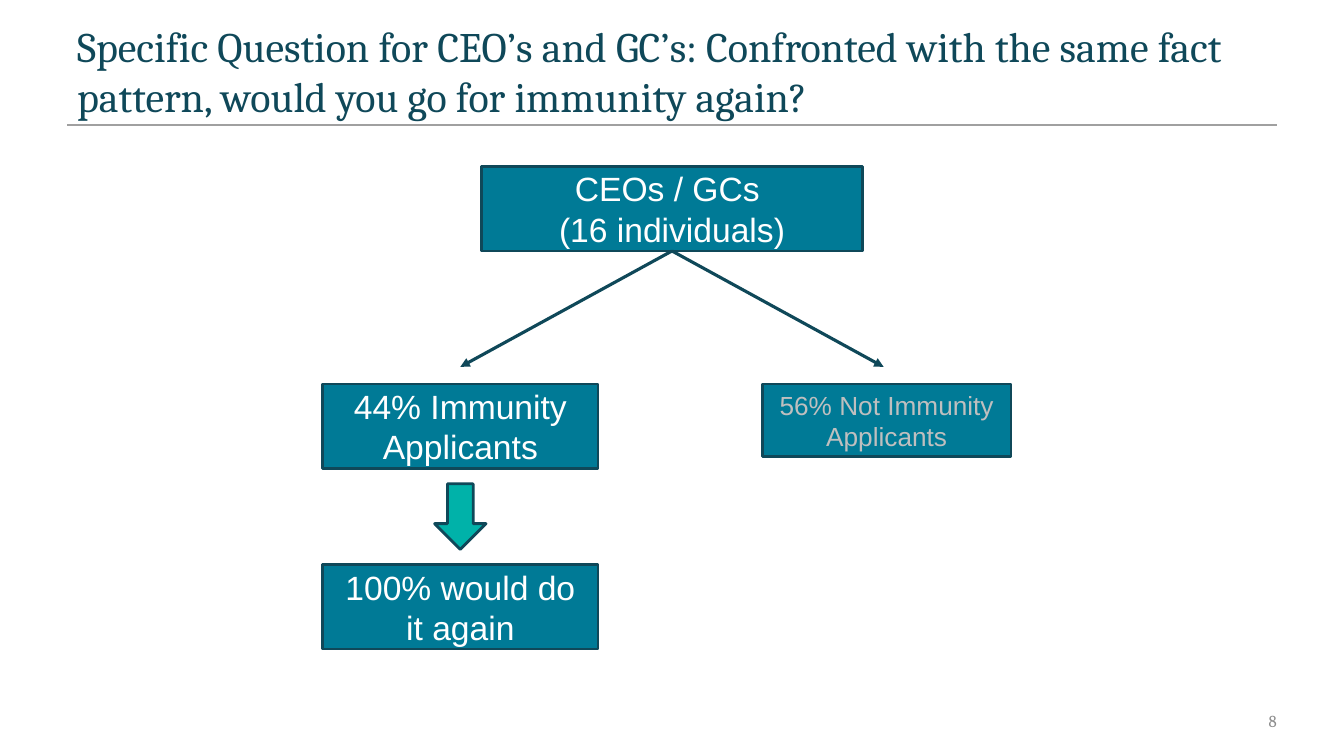
from lxml import etree
from pptx import Presentation
from pptx import util as u
from pptx.dml.color import RGBColor
from pptx.enum import shapes, text
from pptx.oxml.ns import qn

HUES = {"ink": "0F4859", "box": "007A96", "mint": "00B2A9", "rule": "A0A0A0",
        "white": "FFFFFF", "dim": "BFBFBF", "page": "8C8C8C"}
COLS, ROWS = 40, 30
LEFT, MID, RIGHT = 13.7, 20, 26.39
KIND = shapes.MSO_SHAPE
ALIGN = text.PP_ALIGN
ANCHOR = text.MSO_ANCHOR


class Board:
    """Draws styled elements on one slide, placed by grid columns and rows."""

    def __init__(self, deck):
        self.wide = deck.slide_width / COLS
        self.high = deck.slide_height / ROWS
        self.items = deck.slides.add_slide(deck.slide_layouts[6]).shapes

    def spot(self, col, row):
        return round(col * self.wide), round(row * self.high)

    def hue(self, name):
        return RGBColor.from_string(HUES[name])

    def letter(self, shape, words, size, font, hue, align, anchor):
        frame = shape.text_frame
        frame.word_wrap = True
        frame.vertical_anchor = anchor
        frame.text = words
        for para in frame.paragraphs:
            para.alignment = align
            para.font.size = u.Pt(size)
            para.font.name = font
            para.font.color.rgb = self.hue(hue)

    def label(self, col, row, cols, rows, words, size, hue, align, anchor):
        area = self.items.add_textbox(*self.spot(col, row), *self.spot(cols, rows))
        self.letter(area, words, size, "Cambria", hue, align, anchor)
        return area

    def shape(self, kind, mid, row, cols, rows, fill):
        item = self.items.add_shape(kind, *self.spot(mid - cols / 2, row),
                                    *self.spot(cols, rows))
        item.shadow.inherit = False
        item.fill.solid()
        item.fill.fore_color.rgb = self.hue(fill)
        item.line.color.rgb = self.hue("ink")
        item.line.width = u.Pt(2)
        return item

    def box(self, mid, row, cols, words, rows=3.36, size=24, hue="white"):
        item = self.shape(KIND.RECTANGLE, mid, row, cols, rows, "box")
        self.letter(item, words, size, "Arial", hue, ALIGN.CENTER, ANCHOR.MIDDLE)
        return item

    def line(self, start, end, hue, width):
        item = self.items.add_connector(shapes.MSO_CONNECTOR.STRAIGHT,
                                        *self.spot(*start), *self.spot(*end))
        item.line.color.rgb = self.hue(hue)
        item.line.width = u.Pt(width)
        etree.SubElement(item._element.spPr, qn("a:effectLst"))
        return item

    def arrow(self, box, end):
        item = self.line((MID, 9.96), end, "ink", 2.25)
        item.begin_connect(box, 2)
        edge = item._element.spPr.find(qn("a:ln"))
        etree.SubElement(edge, qn("a:tailEnd"), type="triangle")


def main():
    deck = Presentation()
    deck.slide_width, deck.slide_height = u.Inches(13.33), u.Inches(7.5)
    board = Board(deck)

    board.line((2, 4.96), (38, 4.96), "rule", 1)
    board.label(2, 2.32, 36, 2.68,
                "Specific Question for CEO’s and GC’s: Confronted with the same "
                "fact pattern, would you go for immunity again?",
                30, "ink", ALIGN.LEFT, ANCHOR.BOTTOM)
    page = board.label(29, 27.8, 9, 1.6, "8", 12, "page", ALIGN.RIGHT, ANCHOR.MIDDLE)
    page.text_frame.margin_right = 0

    top = board.box(MID, 6.6, 11.34, "CEOs / GCs \n(16 individuals)")
    for end in (26.3, LEFT):
        board.arrow(top, (end, 14.56))
    board.box(LEFT, 15.24, 8.2, "44% Immunity Applicants")
    board.box(RIGHT, 15.24, 7.4, "56% Not Immunity Applicants", 2.88, 18.7, "dim")
    board.shape(KIND.DOWN_ARROW, LEFT, 19.2, 1.53, 2.6, "mint")
    board.box(LEFT, 22.4, 8.2, "100% would do it again")

    deck.save("out.pptx")


if __name__ == "__main__":
    main()
